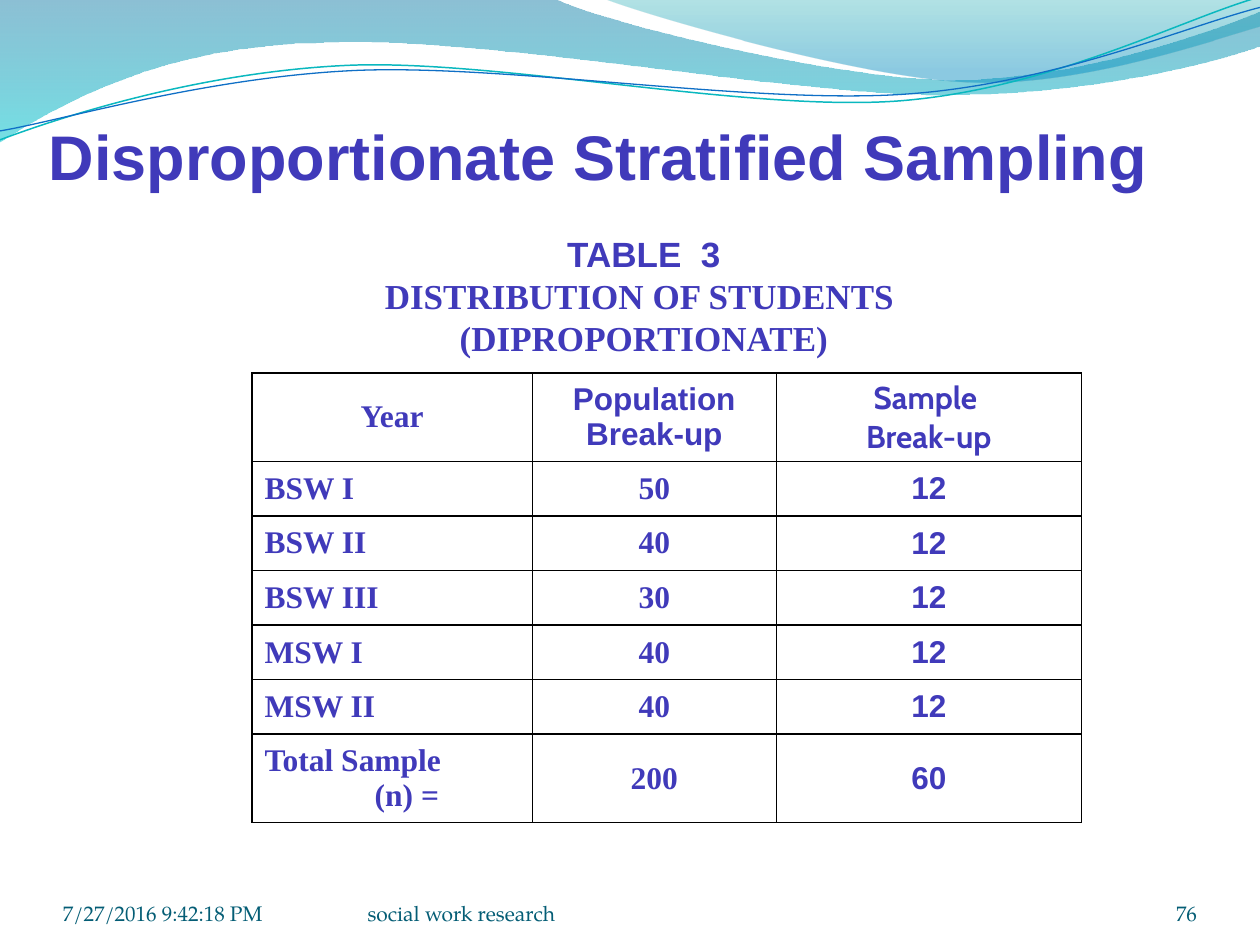
import pptx
import pptx.util
import pptx.dml.color
import pptx.enum.text
import pptx.oxml
import pptx.oxml.ns
from lxml import etree

Cm, Pt = pptx.util.Cm, pptx.util.Pt
ALIGN = pptx.enum.text.PP_ALIGN
ANCHOR = pptx.enum.text.MSO_ANCHOR
qn = pptx.oxml.ns.qn

HUES = {
    "text": "403ABA", "foot": "045D75", "rule": "000000",
    "teal": "0AB8BF", "blue": "0F6FC6",
    "deep": "0074A1", "aqua": "00C6CF", "mint": "00A1A9", "sky": "008BBF",
}
SANS, SERIF, BOOK = "Arial", "Times New Roman", "TeX Gyre Pagella"

# Outlines in cm: a step of one point is a line, of three a Bezier curve.
WAVE = [
    [(0, -0.03)], [(11.18, -0.03)],
    [(12.09, 0.43), (16.87, 1.6), (19.25, 1.6)],
    [(21.67, 1.6), (24.33, 0.66), (25.4, 0.23)],
    [(25.43, 0.91)],
    [(24.97, 1.12), (22.1, 1.93), (18.95, 1.91)],
    [(15.8, 1.91), (9.7, 0.71), (6.53, 0.86)],
    [(3.28, 0.89), (1.17, 2.11), (-0.03, 2.87)],
]
SHEEN = [
    [(12.17, -0.03)],
    [(12.93, 0.28), (17.32, 1.57), (19.53, 1.65)],
    [(21.74, 1.75), (24.41, 0.81), (25.4, 0.53)],
    [(25.4, 0)],
]
UPPER = [
    [(-0.05, 2.22)],
    [(1.19, 1.82), (4.02, 1.04), (7.05, 1.05)],
    [(10.05, 1.07), (15.02, 2.37), (18.08, 2.29)],
    [(21.13, 2.2), (23.87, 0.91), (25.41, 0.55)],
]
LOWER = [
    [(-0.04, 2.04)],
    [(1.16, 1.9), (4.18, 1.15), (7.2, 1.16)],
    [(10.25, 1.18), (15.11, 2.22), (18.19, 2.16)],
    [(21.21, 2.1), (23.93, 1.06), (25.45, 0.75)],
]
TILT = -2.7

YEARS = [("BSW I", 50), ("BSW II", 40), ("BSW III", 30),
         ("MSW I", 40), ("MSW II", 40)]
SHARE = 12


def rgb(name):
    return pptx.dml.color.RGBColor.from_string(HUES[name])


def add_form(slide, steps, close):
    """Build a freeform, then join each run of three points into a curve."""
    dots = [(Cm(x), Cm(y)) for step in steps for x, y in step]
    pen = slide.shapes.build_freeform(*dots[0])
    pen.add_line_segments(dots[1:], close=close)
    form = pen.convert_to_shape()
    form.shadow.inherit = False
    lines = form.element.iter(qn("a:lnTo"))
    lines = iter(list(lines))
    for step in steps[1:]:
        parts = [next(lines) for dot in step]
        if len(parts) == 3:
            curve = etree.Element(qn("a:cubicBezTo"))
            parts[0].addprevious(curve)
            for part in parts:
                curve.append(part[0])
                part.getparent().remove(part)
    return form


def add_wave(slide, steps, stops):
    """Draw a closed form; each stop is (place, hue, opacity in percent)."""
    form = add_form(slide, steps, True)
    form.line.fill.background()
    form.fill.gradient()
    form.fill.gradient_angle = 270
    for stop, (place, hue, alpha) in zip(form.fill.gradient_stops, stops):
        stop.position = place
        stop.color.rgb = rgb(hue)
    tags = form.element.iter(qn("a:srgbClr"))
    for tag, (place, hue, alpha) in zip(tags, stops):
        etree.SubElement(tag, qn("a:alpha"), val=str(alpha * 1000))


def add_curve(slide, steps, hue, width):
    form = add_form(slide, steps, False)
    form.rotation = TILT
    form.fill.background()
    form.line.color.rgb = rgb(hue)
    form.line.width = Pt(width)


def write(frame, lines, size, align, hue="text", bold=True):
    """Fill a frame with paragraphs given as (text, font) pairs."""
    for i, (text, face) in enumerate(lines):
        para = frame.add_paragraph() if i else frame.paragraphs[0]
        para.text = text
        para.alignment = align
        font = para.font
        font.name, font.size, font.bold = face, Pt(size), bold
        font.color.rgb = rgb(hue)


def add_text(slide, box, lines, size, align, anchor, inset=0, **style):
    frame = slide.shapes.add_textbox(*map(Cm, box)).text_frame
    frame.word_wrap = True
    frame.vertical_anchor = anchor
    frame.margin_left = frame.margin_right = Cm(inset)
    frame.margin_top = frame.margin_bottom = Cm(inset / 2)
    write(frame, lines, size, align, **style)
    return frame


def add_label(slide):
    label = add_text(slide, (6.48, 3.84, 11.73, 5),
                     [("TABLE  3", SANS), ("DISTRIBUTION OF STUDENTS ", SERIF),
                      ("(DIPROPORTIONATE)", SERIF)],
                     20, ALIGN.CENTER, ANCHOR.MIDDLE)
    label.margin_bottom = Cm(0.78)
    for para in label.paragraphs:
        para.line_spacing = Pt(24)
        para._p.get_or_add_pPr().set("indent", str(Cm(1.27)))


def rule_cell(cell):
    """Give a cell thin borders on all four sides and no fill."""
    props = cell._tc.get_or_add_tcPr()
    for side in ("lnL", "lnR", "lnT", "lnB"):
        props.append(pptx.oxml.parse_xml(
            f'<a:{side} {pptx.oxml.ns.nsdecls("a")} w="12700"><a:solidFill>'
            f'<a:srgbClr val="{HUES["rule"]}"/></a:solidFill></a:{side}>'))
    cell.fill.background()


def add_table(slide):
    total = sum(size for year, size in YEARS)
    rows = [([("Year", SERIF)], [("Population Break-up", SANS)],
             [("Sample ", "Cabin"), ("Break-up", "Cabin")])]
    rows += [([(year, SERIF)], [(str(size), SERIF)], [(str(SHARE), SANS)])
             for year, size in YEARS]
    rows.append(([("Total Sample", SERIF), ("(n) =", SERIF)],
                 [(str(total), SERIF)], [(str(SHARE * len(YEARS)), SANS)]))
    widths = (5.65, 4.92, 6.15)
    tall, low = 1.78, 1.1
    table = slide.shapes.add_table(
        len(rows), len(widths), Cm(5.08), Cm(7.52), Cm(sum(widths)),
        Cm(2 * tall + low * len(YEARS))).table
    table.first_row = table.horz_banding = False
    for col, width in zip(table.columns, widths):
        col.width = Cm(width)
    for r, row in enumerate(rows):
        table.rows[r].height = Cm(tall if r in (0, len(rows) - 1) else low)
        for c, lines in enumerate(row):
            cell = table.cell(r, c)
            cell.vertical_anchor = ANCHOR.MIDDLE
            align = ALIGN.CENTER
            if r and not c:
                align = ALIGN.JUSTIFY if r > 1 else ALIGN.LEFT
            write(cell.text_frame, lines, 18, align)
            rule_cell(cell)
    last = table.cell(len(rows) - 1, 0).text_frame.paragraphs[1]
    last._p.get_or_add_pPr().set("marL", str(Cm(2.22)))


def main():
    deck = pptx.Presentation()
    deck.slide_width, deck.slide_height = Cm(25.4), Cm(19.05)
    slide = deck.slides.add_slide(deck.slide_layouts[6])

    add_wave(slide, WAVE, [(0, "deep", 45), (1, "aqua", 55)])
    add_wave(slide, SHEEN, [(0, "mint", 30), (0.8, "sky", 45)])
    add_curve(slide, UPPER, "teal", 0.85)
    add_curve(slide, LOWER, "blue", 0.75)

    add_text(slide, (0, 0.84, 24.13, 3.17),
             [("Disproportionate Stratified Sampling", SANS)],
             36, ALIGN.CENTER, ANCHOR.BOTTOM, inset=0.25)
    add_label(slide)
    add_table(slide)

    for left, width, text, align in (
            (1.27, 5.92, "7/27/2016 9:42:18 PM", ALIGN.LEFT),
            (22.02, 2.11, "76", ALIGN.RIGHT),
            (7.41, 9.31, "social work research", ALIGN.LEFT)):
        add_text(slide, (left, 17.65, width, 1.02), [(text, BOOK)], 12, align,
                 ANCHOR.BOTTOM, hue="foot", bold=False)
    deck.save("out.pptx")


if __name__ == "__main__":
    main()
